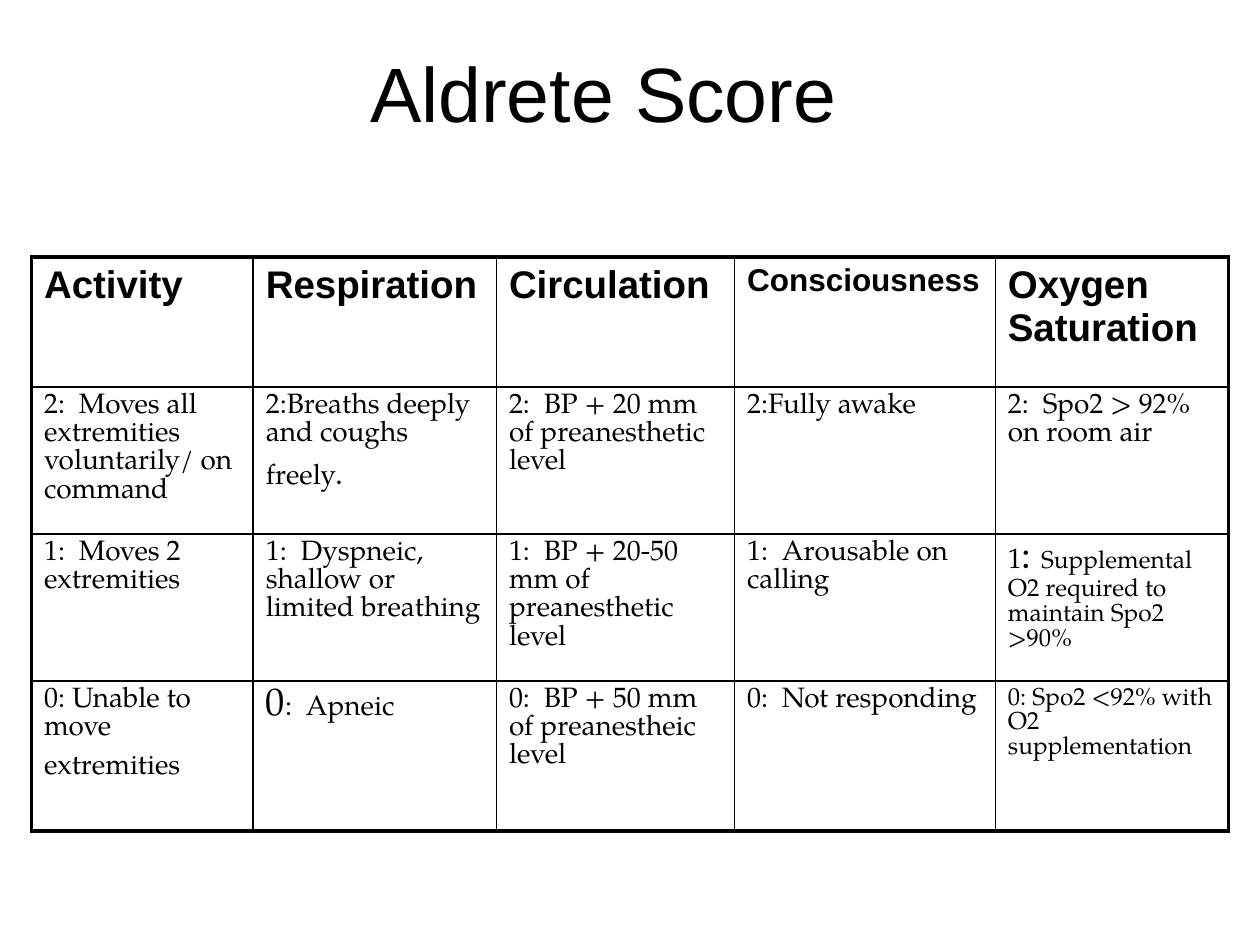
from lxml.etree import SubElement
from pptx import Presentation
from pptx.dml.color import RGBColor
from pptx.enum.text import MSO_ANCHOR, PP_ALIGN
from pptx.oxml.ns import qn
from pptx.util import Inches, Pt

BLACK = "000000"
HEADING_FONT = "Arial"
BODY_FONT = "TeX Gyre Pagella"
COLUMN_WIDTHS = [1.76, 1.93, 1.89, 2.07, 1.85]
ROW_HEIGHTS = [1.03, 1.13, 1.13, 1.19]
THIN, THICK = 1, 2.25

HEADINGS = [
    [("Activity", 22)],
    [("Respiration", 22)],
    [("Circulation", 22)],
    [("Consciousness", 18)],
    [("Oxygen Saturation", 22)],
]
SCORES = [
    [
        [("2:  Moves all extremities voluntarily/ on command", 16)],
        [("2:Breaths deeply and coughs freely", 16), (".  ", 18), ("  ", 28)],
        [("2:  BP + 20 mm of preanesthetic level", 16)],
        [("2:Fully awake", 16)],
        [("2:  Spo2 > 92% on room air", 16)],
    ],
    [
        [("1:  Moves 2 extremities", 16)],
        [("1:  Dyspneic, shallow or limited breathing", 16)],
        [("1:  BP + 20-50 mm of preanesthetic level", 16)],
        [("1:  Arousable on calling", 16)],
        [("1", 16), (": ", 22),
         ("Supplemental O2 required to maintain Spo2 >90%", 14)],
    ],
    [
        [("0: Unable to move extremities", 16), (" ", 24)],
        [("0", 22), (":  Apneic", 16)],
        [("0:  BP + 50 mm of preanestheic level", 16)],
        [("0:  Not responding", 16)],
        [("0: Spo2 <92% with O2 supplementation", 14)],
    ],
]


def color(value):
    return RGBColor.from_string(value)


def write_runs(paragraph, runs, font_name, bold=False):
    paragraph.font.name = font_name
    paragraph.font.bold = bold
    paragraph.font.color.rgb = color(BLACK)
    for text, size in runs:
        run = paragraph.add_run()
        run.text = text
        run.font.size = Pt(size)


def set_space_before(paragraph, percent):
    paragraph.space_before = Pt(0)
    spacing = paragraph._p.pPr.find(qn("a:spcBef"))
    spacing.remove(spacing[0])
    SubElement(spacing, qn("a:spcPct"), val=str(percent * 1000))


def set_borders(cell, widths):
    properties = cell._tc.get_or_add_tcPr()
    for side, width in zip("LRTB", widths):
        line = SubElement(properties, qn(f"a:ln{side}"), w=str(Pt(width)))
        fill = SubElement(line, qn("a:solidFill"))
        SubElement(fill, qn("a:srgbClr"), val=BLACK)


def add_title(slide, left, top, width, height):
    shape = slide.shapes.add_textbox(left, top, width, height)
    frame = shape.text_frame
    frame.word_wrap = True
    frame.vertical_anchor = MSO_ANCHOR.TOP
    frame.margin_top = Inches(0.11)
    paragraph = frame.paragraphs[0]
    paragraph.alignment = PP_ALIGN.CENTER
    write_runs(paragraph, [("Aldrete Score", 44)], HEADING_FONT)


def add_score_table(slide, left, top, width, height):
    rows = [HEADINGS] + SCORES
    last_row, last_column = len(rows) - 1, len(HEADINGS) - 1
    table = slide.shapes.add_table(
        len(rows), len(HEADINGS), left, top, width, height).table
    table.first_row = False
    table.horz_banding = False
    for column, column_width in zip(table.columns, COLUMN_WIDTHS):
        column.width = Inches(column_width)
    for row, row_height in zip(table.rows, ROW_HEIGHTS):
        row.height = Inches(row_height)
    for row_index, row in enumerate(rows):
        is_heading = row_index == 0
        for column_index, runs in enumerate(row):
            cell = table.cell(row_index, column_index)
            outer_sides = [column_index == 0, column_index == last_column,
                           is_heading, row_index == last_row]
            set_borders(cell, [THICK if outer else THIN for outer in outer_sides])
            cell.fill.background()
            paragraph = cell.text_frame.paragraphs[0]
            set_space_before(paragraph, 20)
            write_runs(paragraph, runs,
                       HEADING_FONT if is_heading else BODY_FONT, is_heading)


def main():
    presentation = Presentation()
    presentation.slide_width = Inches(10)
    presentation.slide_height = Inches(7.5)
    slide = presentation.slides.add_slide(presentation.slide_layouts[6])
    add_title(slide, Inches(0.33), Inches(0.25), Inches(8.92), Inches(1.25))
    add_score_table(slide, Inches(0.25), Inches(2.04), Inches(9.5), Inches(4.48))
    presentation.save("out.pptx")


if __name__ == "__main__":
    main()
